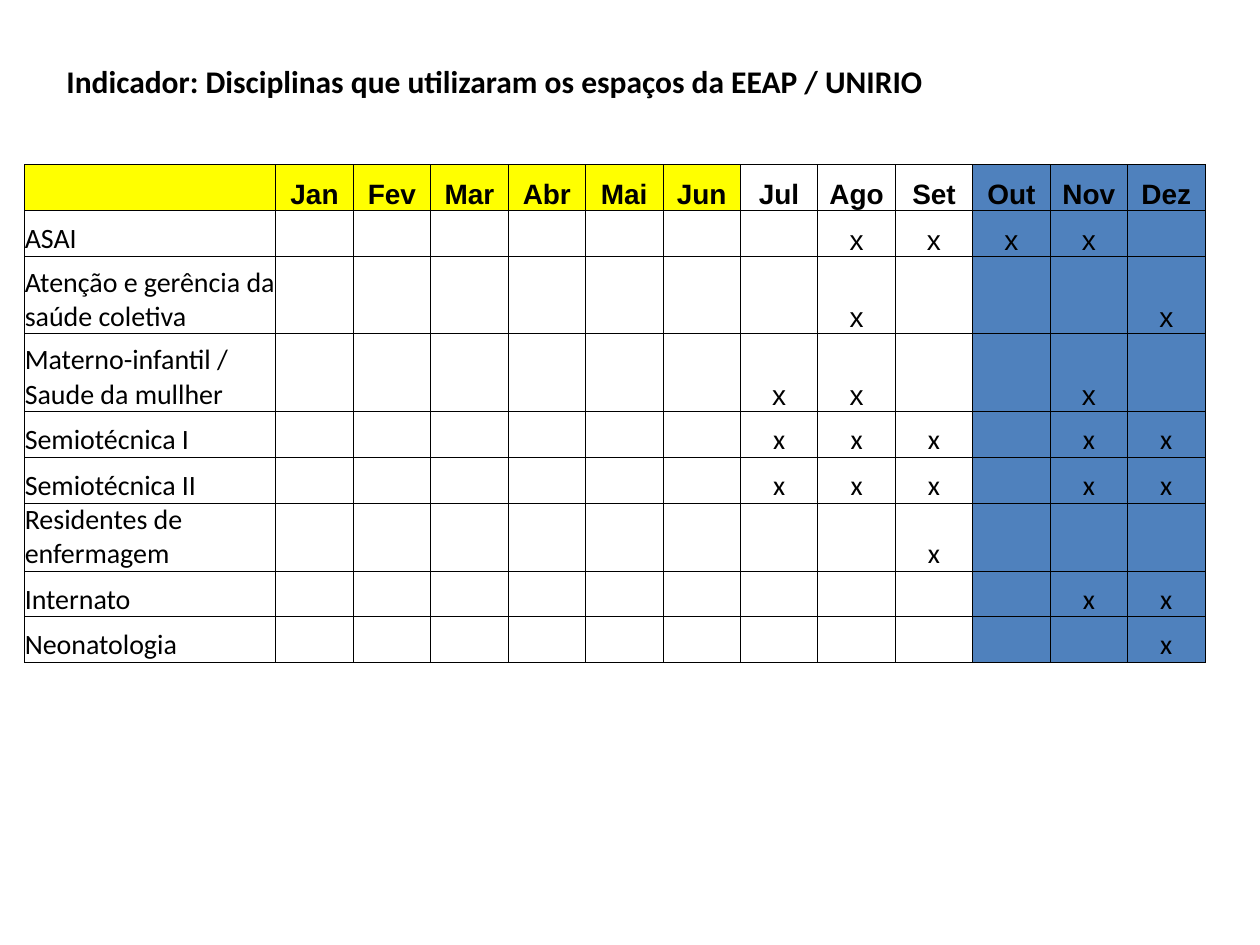
from lxml.etree import SubElement
from pptx import Presentation
from pptx.dml.color import RGBColor
from pptx.enum.text import MSO_ANCHOR as Anchor, MSO_AUTO_SIZE as AutoSize, PP_ALIGN as Align
from pptx.oxml.ns import qn
from pptx.util import Cm, Pt

# Content
TITLE = "Indicador: Disciplinas que utilizaram os espaços da EEAP / UNIRIO"
MONTHS = ["Jan", "Fev", "Mar", "Abr", "Mai", "Jun",
          "Jul", "Ago", "Set", "Out", "Nov", "Dez"]
# discipline, months in use, font of the marks, row height in cm
DISCIPLINES = [
    ("ASAI", "Ago Set Out Nov", "Arial", 0.92),
    ("Atenção e gerência da saúde coletiva", "Ago Dez", "Arial", 1.57),
    ("Materno-infantil / Saude da mullher", "Jul Ago Nov", "Arial", 1.57),
    ("Semiotécnica I", "Jul Ago Set Nov Dez", "Calibri", 0.92),
    ("Semiotécnica II", "Jul Ago Set Nov Dez", "Calibri", 0.92),
    ("Residentes de enfermagem", "Set", "Calibri", 1.37),
    ("Internato", "Nov Dez", "Calibri", 0.92),
    ("Neonatologia", "Dez", "Calibri", 0.92),
]
COLORS = {"text": "000000", "border": "000000",
          "first_half": "FFFF00", "last_quarter": "4F81BD"}
HEADER_HEIGHT = 0.92
TABLE_WIDTH, NAME_WIDTH = 23.8, 5.06
NO_STYLE = "{2D5ABB26-0587-4C30-8999-92F81FD0307C}"


def add_span(para, text, font, size, bold=False):
    span = para.add_run()
    span.text = text
    span.font.name = font
    span.font.size = Pt(size)
    span.font.bold = bold
    span.font.color.rgb = RGBColor.from_string(COLORS["text"])


def add_borders(cell):
    properties = cell._tc.get_or_add_tcPr()
    for side in ("a:lnL", "a:lnR", "a:lnT", "a:lnB"):
        line = SubElement(properties, qn(side), w=str(Pt(0.5)))
        fill = SubElement(line, qn("a:solidFill"))
        SubElement(fill, qn("a:srgbClr"), val=COLORS["border"])


def format_cell(cell, color=None):
    cell.margin_left = cell.margin_right = cell.margin_top = cell.margin_bottom = 0
    cell.vertical_anchor = Anchor.BOTTOM
    add_borders(cell)
    if color:
        cell.fill.solid()
        cell.fill.fore_color.rgb = RGBColor.from_string(COLORS[color])
    else:
        cell.fill.background()


def write_cell(cell, text, font, bold=False, align=Align.CENTER):
    para = cell.text_frame.paragraphs[0]
    para.alignment = align
    add_span(para, text, font, 16, bold)


def month_color(column, is_header):
    if column > 9:
        return "last_quarter"
    return "first_half" if is_header and column <= 6 else None


deck = Presentation()
deck.slide_width, deck.slide_height = Cm(25.4), Cm(19.05)
page = deck.slides.add_slide(deck.slide_layouts[6])

# Title
box = page.shapes.add_textbox(Cm(1.09), Cm(1.12), Cm(20.6), Cm(1.02))
box.text_frame.word_wrap = True
box.text_frame.auto_size = AutoSize.SHAPE_TO_FIT_TEXT
add_span(box.text_frame.paragraphs[0], TITLE, "Calibri", 18, bold=True)

# Table grid
heights = [HEADER_HEIGHT] + [row[3] for row in DISCIPLINES]
frame = page.shapes.add_table(len(heights), len(MONTHS) + 1, Cm(0.5), Cm(3.32),
                              Cm(TABLE_WIDTH), Cm(sum(heights)))
table = frame.table
table.first_row = table.horz_banding = False
table._tbl.tblPr.find(qn("a:tableStyleId")).text = NO_STYLE
month_width = (TABLE_WIDTH - NAME_WIDTH) / len(MONTHS)
for index, column in enumerate(table.columns):
    column.width = Cm(month_width if index else NAME_WIDTH)
for row, height in zip(table.rows, heights):
    row.height = Cm(height)
for row_index in range(len(heights)):
    for column_index in range(len(MONTHS) + 1):
        format_cell(table.cell(row_index, column_index),
                    month_color(column_index, row_index == 0))

# Month headings
for column_index, month in enumerate(MONTHS, 1):
    write_cell(table.cell(0, column_index), month, "Arial", bold=True)

# Disciplines and their marks
for row_index, (name, used, mark_font, _) in enumerate(DISCIPLINES, 1):
    write_cell(table.cell(row_index, 0), name, "Calibri", align=Align.LEFT)
    for month in used.split():
        write_cell(table.cell(row_index, MONTHS.index(month) + 1), "x", mark_font)

deck.save("out.pptx")
